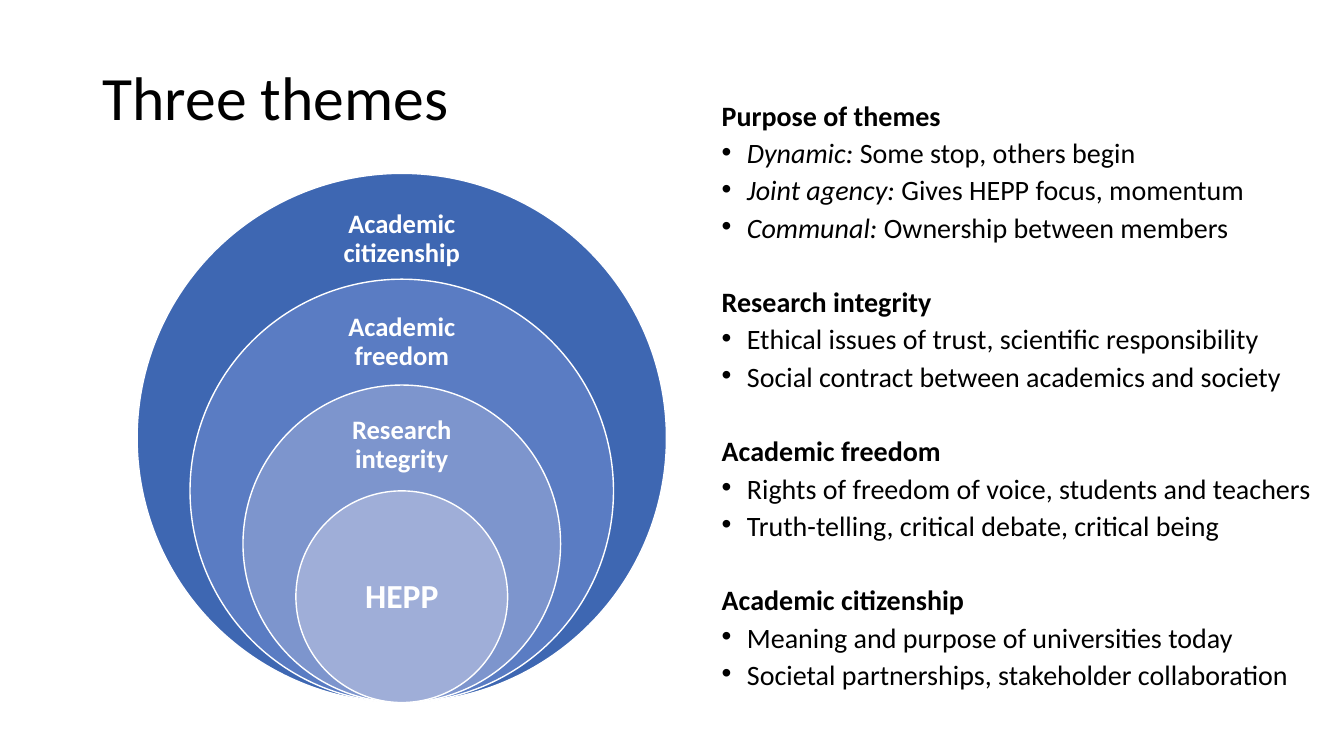
from pptx import Presentation, util as u
from pptx.dml.color import RGBColor
from pptx.enum import shapes, text
from lxml import etree

TITLE = "Three themes"
SECTIONS = [
    ("Purpose of themes", [
        ("Dynamic: ", "Some stop, others begin"),
        ("Joint agency: ", "Gives HEPP focus, momentum"),
        ("Communal: ", "Ownership between members")]),
    ("Research integrity", [
        ("", "Ethical issues of trust, scientific responsibility"),
        ("", "Social contract between academics and society")]),
    ("Academic freedom", [
        ("", "Rights of freedom of voice, students and teachers"),
        ("", "Truth-telling, critical debate, critical being")]),
    ("Academic citizenship", [
        ("", "Meaning and purpose of universities today"),
        ("", "Societal partnerships, stakeholder collaboration")]),
]
COLORS = {"ink": "000000", "paper": "FFFFFF", "ring 1": "3E67B2",
          "ring 2": "5A7CC3", "ring 3": "7D95CD", "ring 4": "9FAED8"}
RINGS = [
    {"label": "Academic citizenship", "color": "ring 1", "drop": 0.26, "height": 0.79, "size": 19, "inset": 0.15},
    {"label": "Academic freedom", "color": "ring 2", "drop": 0.25, "height": 0.76, "size": 19, "inset": 0.15},
    {"label": "Research integrity", "color": "ring 3", "drop": 0.24, "height": 0.71, "size": 19, "inset": 0.15},
    {"label": "HEPP", "color": "ring 4", "drop": 0.53, "height": 1.05, "size": 24, "inset": 0.19},
]
WIDTH, HEIGHT = 13.33, 7.5
CENTER, BASE, STEP = 3.985, 6.97, 1.05
LABEL_WIDTH = 1.48
ROW_GAP, SECTION_GAP = 9.75, 36.55


def rgb(name):
    return RGBColor.from_string(COLORS[name])


def add_box(page, left, top, width, height, anchor, inset=None):
    box = page.shapes.add_textbox(*(u.Inches(v) for v in (left, top, width, height)))
    frame = box.text_frame
    settings = {"word_wrap": True, "vertical_anchor": anchor}
    if inset is not None:
        for side in ("left", "top", "right", "bottom"):
            settings["margin_" + side] = u.Inches(inset)
    for name, value in settings.items():
        setattr(frame, name, value)
    return frame


def add_span(para, words, size, color="ink", **formats):
    span = para.add_run()
    span.text = words
    formats.update(name="Calibri", size=u.Pt(size))
    for name, value in formats.items():
        setattr(span.font, name, value)
    span.font.color.rgb = rgb(color)


def add_bullet(para):
    props = para._p.get_or_add_pPr()
    props.set("marL", str(u.Inches(0.25)))
    props.set("indent", str(-u.Inches(0.25)))
    space = "{http://schemas.openxmlformats.org/drawingml/2006/main}"
    etree.SubElement(props, space + "buFont").set("typeface", "Arial")
    etree.SubElement(props, space + "buChar").set("char", "•")


def draw_title(page):
    para = add_box(page, 0.92, 0.27, 11.5, 1.45, text.MSO_ANCHOR.MIDDLE).paragraphs[0]
    para.line_spacing = 0.9
    add_span(para, TITLE, 44)


def draw_sections(page):
    frame = add_box(page, 7.06, 1.02, 6.14, 5.96, text.MSO_ANCHOR.TOP)
    for number, (heading, points) in enumerate(SECTIONS):
        for row, (lead, words) in enumerate([("", heading)] + points):
            first = number == row == 0
            para = frame.paragraphs[0] if first else frame.add_paragraph()
            para.line_spacing = 0.7
            para.space_before = u.Pt(SECTION_GAP if row == 0 and number else ROW_GAP)
            if row:
                add_bullet(para)
            if lead:
                add_span(para, lead, 20, italic=True)
            add_span(para, words, 20, bold=row == 0)


def draw_rings(page):
    for number, ring in enumerate(RINGS):
        size = STEP * (len(RINGS) + 1 - number)
        top = BASE - size
        place = (CENTER - size / 2, top, size, size)
        circle = page.shapes.add_shape(shapes.MSO_SHAPE.OVAL, *(u.Inches(v) for v in place))
        circle.shadow.inherit = False
        circle.fill.solid()
        circle.fill.fore_color.rgb = rgb(ring["color"])
        circle.line.color.rgb = rgb("paper")
        circle.line.width = u.Pt(1)
        frame = add_box(page, CENTER - LABEL_WIDTH / 2, top + ring["drop"], LABEL_WIDTH,
                        ring["height"], text.MSO_ANCHOR.MIDDLE, ring["inset"])
        para = frame.paragraphs[0]
        para.alignment = text.PP_ALIGN.CENTER
        para.line_spacing = 0.9
        add_span(para, ring["label"], ring["size"], "paper", bold=True)


def main():
    deck = Presentation()
    deck.slide_width, deck.slide_height = u.Inches(WIDTH), u.Inches(HEIGHT)
    page = deck.slides.add_slide(deck.slide_layouts[6])
    draw_title(page)
    draw_sections(page)
    draw_rings(page)
    deck.save("out.pptx")


if __name__ == "__main__":
    main()
